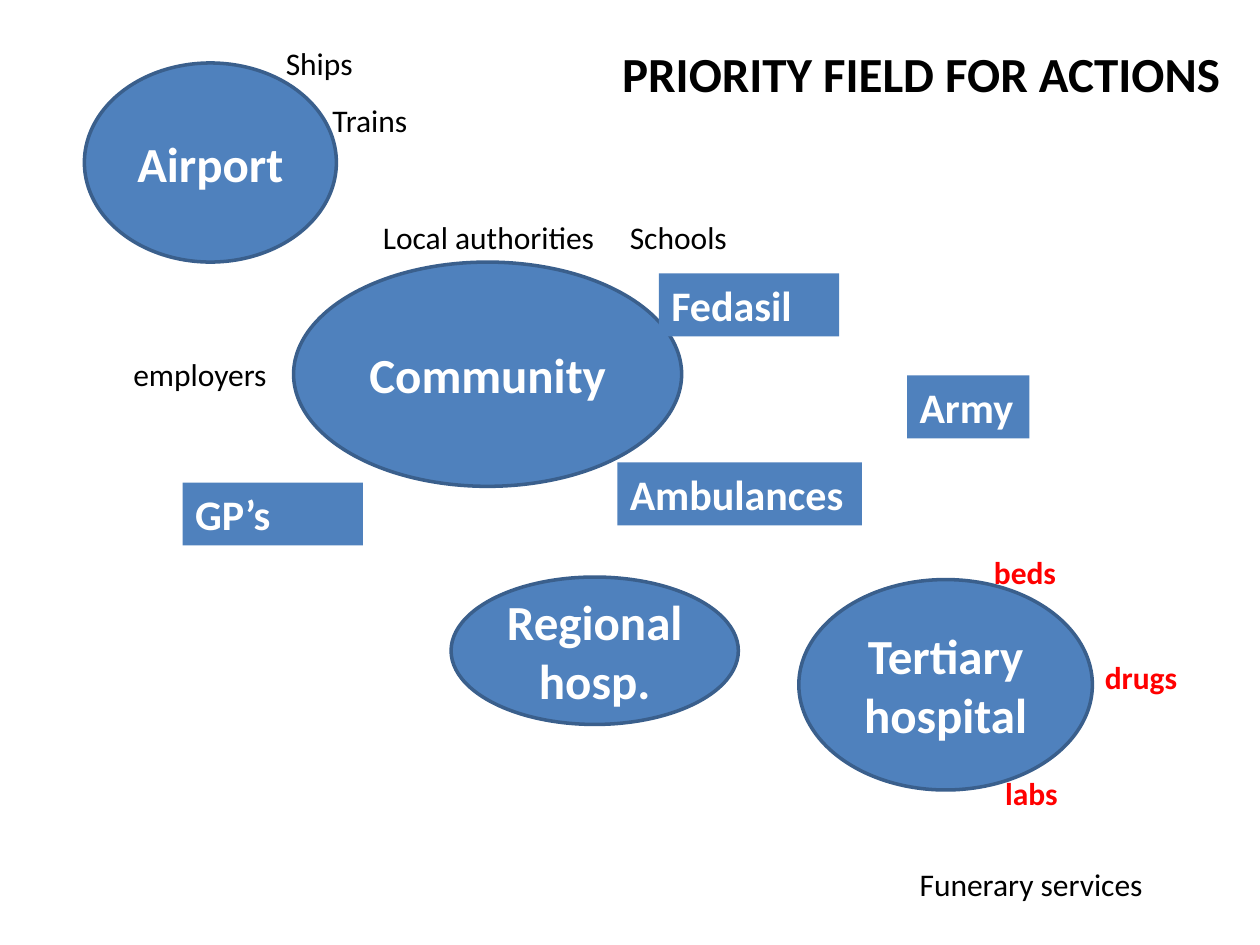
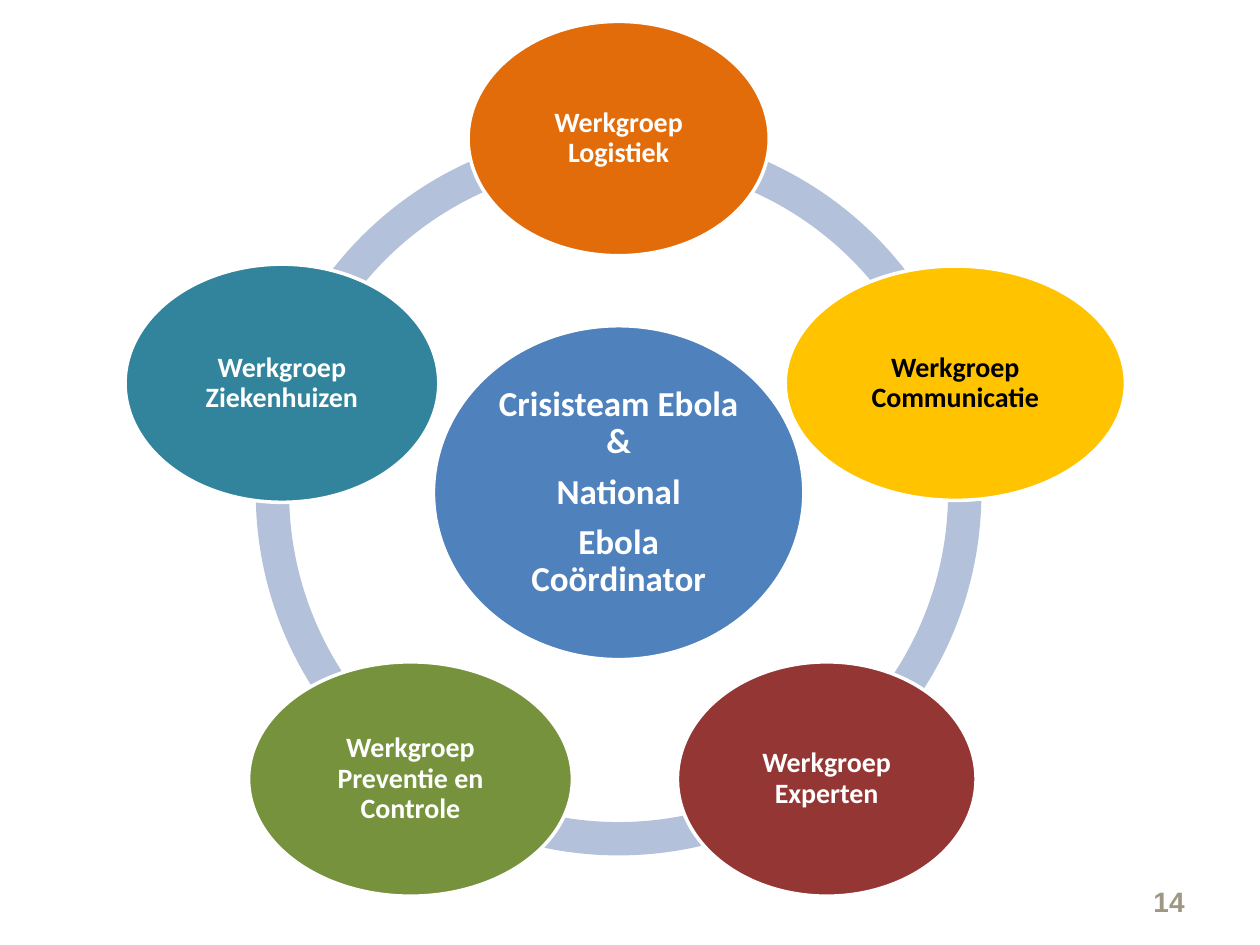
from dataclasses import dataclass, replace
from math import cos, radians, sin
from typing import NamedTuple

from pptx import Presentation
from pptx.dml.color import RGBColor
from pptx.enum.shapes import MSO_SHAPE as Shape
from pptx.enum.text import MSO_ANCHOR as Anchor, MSO_AUTO_SIZE as Fit, PP_ALIGN as Align
from pptx.util import Inches, Pt

BLUE, EDGE, RING = "4F81BD", "3A5F8C", "B3C1DB"
WHITE, BLACK, RED, GREY = "FFFFFF", "000000", "FF0000", "9F9683"


@dataclass(frozen=True)
class Style:
    size: int
    color: str = WHITE
    bold: bool = True
    font: str = "Calibri"
    form: Shape | None = None
    fill: str = BLUE
    line: str | None = None
    align: Align = Align.LEFT
    anchor: Anchor = Anchor.TOP
    wrap: bool = True
    fit: Fit = Fit.NONE
    inset: float | None = None
    pitch: float = 1.0
    after: float = 0


class Item(NamedTuple):
    text: str
    left: float
    top: float
    width: float
    height: float = 0.4


class Node(NamedTuple):
    text: str
    fill: str
    width: float
    height: float = 1.86
    color: str = WHITE


HUB = Style(28, form=Shape.OVAL, line=EDGE, align=Align.CENTER, anchor=Anchor.MIDDLE)
BOX = Style(24, form=Shape.RECTANGLE, fit=Fit.SHAPE_TO_FIT_TEXT)
LABEL = Style(18, BLACK, bold=False, wrap=False, fit=Fit.SHAPE_TO_FIT_TEXT)
NEED = replace(LABEL, color=RED, bold=True)
TITLE = replace(LABEL, size=28, bold=True)
TEAM = replace(HUB, size=16, line=WHITE, inset=0.02, pitch=0.9)
CORE = replace(TEAM, size=20, inset=0.03, after=7)
PAGE = Style(16, GREY, font="Arial", align=Align.RIGHT, anchor=Anchor.MIDDLE)

FIELD = {
    HUB: [
        Item("Airport", 0.67, 0.5, 2, 1.58),
        Item("Community", 2.33, 2.08, 3.08, 1.78),
        Item("Tertiary hospital", 6.34, 4.6, 2.33, 1.67),
        Item("Regional hosp.", 3.58, 4.58, 2.28, 1.17),
    ],
    BOX: [
        Item("Fedasil", 5.23, 2.17, 1.43, 0.5),
        Item("GP’s", 1.45, 3.83, 1.43, 0.5),
        Item("Ambulances", 4.9, 3.67, 1.94, 0.5),
        Item("Army", 7.2, 2.98, 0.97, 0.5),
    ],
    LABEL: [
        Item("Ships", 2.17, 0.3, 0.74),
        Item("Trains", 2.54, 0.75, 0.8),
        Item("employers", 0.96, 2.77, 1.27),
        Item("Local authorities", 2.94, 1.68, 1.9),
        Item("Schools", 4.9, 1.68, 0.98),
        Item("Funerary services", 7.2, 6.82, 2.05),
    ],
    NEED: [
        Item("beds", 7.79, 4.34, 0.73),
        Item("drugs", 8.67, 5.17, 0.81),
        Item("labs", 7.88, 6.09, 0.66),
    ],
    TITLE: [Item("PRIORITY FIELD FOR ACTIONS", 4.84, 0.3, 5, 0.57)],
}

# Clockwise from the top of the ring
NODES = [
    Node("Werkgroep Logistiek", "E36C0A", 2.39),
    Node("Werkgroep Communicatie", "FFC300", 2.7, color=BLACK),
    Node("Werkgroep Experten", "943634", 2.37),
    Node("Werkgroep Preventie en Controle", "76923C", 2.57),
    Node("Werkgroep Ziekenhuizen", "31849B", 2.49, 1.89),
]
MID_X, MID_Y, REACH, SPAN = 4.91, 3.91, 2.81, 5.76


def paint(target, color: str) -> None:
    """Give a fill one solid colour."""
    target.solid()
    target.fore_color.rgb = RGBColor.from_string(color)


def form(slide, kind: Shape, place: tuple, fill: str, line: str | None = None):
    """Add a flat preset shape; place is left, top, width, height in inches."""
    shape = slide.shapes.add_shape(kind, *map(Inches, place))
    shape.shadow.inherit = False
    paint(shape.fill, fill)
    if line:
        paint(shape.line.fill, line)
        shape.line.width = Pt(2)
    else:
        shape.line.fill.background()
    return shape


def write(frame, text: str, style: Style) -> None:
    """Fill a text frame, one paragraph for each line of text."""
    setup = {"word_wrap": style.wrap, "auto_size": style.fit, "vertical_anchor": style.anchor}
    if style.inset is not None:
        for side in ("left", "top", "right", "bottom"):
            setup[f"margin_{side}"] = Inches(style.inset)
    for key, value in setup.items():
        setattr(frame, key, value)
    frame.text = text
    look = {"name": style.font, "size": Pt(style.size), "bold": style.bold}
    for para in frame.paragraphs:
        para.alignment = style.align
        para.line_spacing = style.pitch
        if para.text != frame.paragraphs[-1].text:
            para.space_after = Pt(style.after)
        font = para.runs[0].font
        for key, value in look.items():
            setattr(font, key, value)
        paint(font.fill, style.color)


def draw(slide, item: Item, style: Style) -> None:
    place = item[1:]
    if style.form is None:
        shape = slide.shapes.add_textbox(*map(Inches, place))
    else:
        shape = form(slide, style.form, place, style.fill, style.line)
    write(shape.text_frame, item.text, style)


def oval(slide, node: Node, x: float, y: float, style: Style) -> None:
    """Draw a node centred on x, y."""
    item = Item(node.text, x - node.width / 2, y - node.height / 2, node.width, node.height)
    draw(slide, item, replace(style, fill=node.fill, color=node.color))


def map_field(slide) -> None:
    for style, items in FIELD.items():
        for item in items:
            draw(slide, item, style)


def map_teams(slide) -> None:
    draw(slide, Item("14", 7.17, 6.95, 2.33), PAGE)
    step = 360 / len(NODES)
    turns = [(270 + step * i) % 360 for i in range(len(NODES))]
    place = (MID_X - SPAN / 2, MID_Y - SPAN / 2, SPAN, SPAN)
    for turn in turns:
        arc = form(slide, Shape.BLOCK_ARC, place, RING)
        # Arc angles are stored in units of 100000/60000 degrees
        ends = (turn * 0.6, (turn + step) % 360 * 0.6, 0.046)
        for i, value in enumerate(ends):
            arc.adjustments[i] = value
    core = Node("Crisisteam Ebola &\nNational\nEbola Coördinator", BLUE, 2.94, 2.65)
    oval(slide, core, MID_X, MID_Y, CORE)
    for node, turn in zip(NODES, turns):
        angle = radians(turn)
        oval(slide, node, MID_X + REACH * cos(angle), MID_Y + REACH * sin(angle), TEAM)


def main() -> None:
    deck = Presentation()
    deck.slide_width, deck.slide_height = Inches(10), Inches(7.5)
    for build in (map_field, map_teams):
        build(deck.slides.add_slide(deck.slide_layouts[6]))
    deck.save("out.pptx")


if __name__ == "__main__":
    main()
